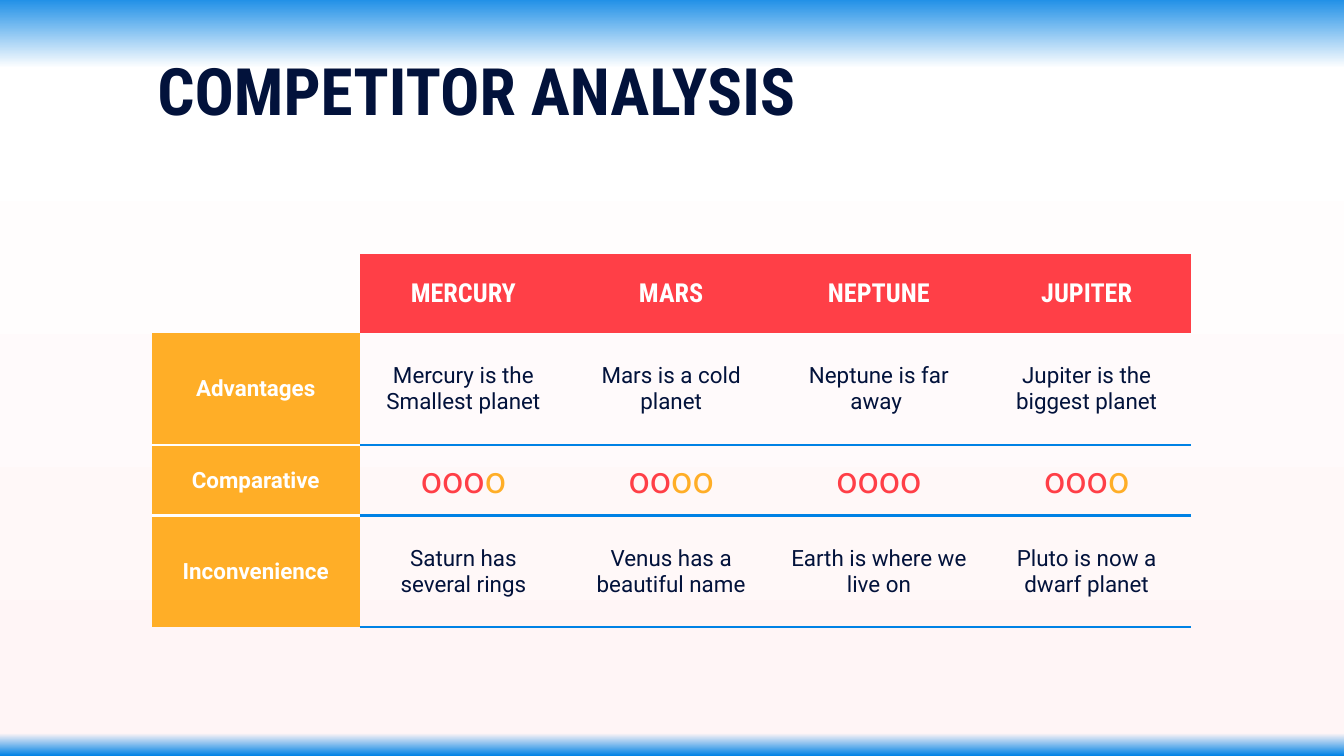
from dataclasses import dataclass
from typing import Optional

from lxml.etree import SubElement
from pptx import Presentation
from pptx.dml.color import RGBColor
from pptx.enum.shapes import MSO_SHAPE
from pptx.enum.text import MSO_ANCHOR, MSO_AUTO_SIZE, PP_ALIGN
from pptx.oxml.ns import qn
from pptx.util import Inches, Pt

NAVY = RGBColor(0x02, 0x12, 0x3B)
RED = RGBColor(0xFF, 0x3F, 0x47)
ORANGE = RGBColor(0xFF, 0xAE, 0x27)
BLUE = RGBColor(0x00, 0x82, 0xE5)
SKY = RGBColor(0x22, 0x91, 0xE7)
ROSE = RGBColor(0xFF, 0xF5, 0xF6)
CREAM = RGBColor(0xFF, 0xEC, 0xDC)
WHITE = RGBColor(0xFF, 0xFF, 0xFF)

# Widescreen, 16:9
WIDTH = Inches(10)
HEIGHT = WIDTH * 9 // 16
BACKDROP_STOPS = [(0, SKY), (9, WHITE), (97, ROSE), (100, BLUE)]
TABLE_WIDTH = 7.73
ROW_HEIGHTS = [0.59, 0.83, 0.52, 0.83]
MAX_RATING = 4
SIDES = ("left", "right", "top", "bottom")

TITLE = dict(name="Roboto Condensed", size=Pt(35), bold=True)
HEADER = dict(name="Roboto Condensed", size=Pt(14), bold=True)
LABEL = dict(name="Roboto", size=Pt(12), bold=True)
BODY = dict(name="Roboto", size=Pt(12), bold=False)
RATING = dict(name="Roboto", size=Pt(20), bold=False)


@dataclass
class Planet:
    name: str
    advantage: str
    rating: int
    inconvenience: str


@dataclass
class CellStyle:
    font: dict
    color: RGBColor
    fill: Optional[RGBColor] = None
    top: Optional[RGBColor] = None
    bottom: Optional[RGBColor] = None


PLANETS = [
    Planet("MERCURY", "Mercury is the\nSmallest planet", 3, "Saturn has several rings"),
    Planet("MARS", "Mars is a cold planet", 2, "Venus has a beautiful name"),
    Planet("NEPTUNE", "Neptune is far away ", 4, "Earth is where we live on"),
    Planet("JUPITER", "Jupiter is the biggest planet", 3, "Pluto is now a dwarf planet"),
]
LABELS = ["Advantages", "Comparative", "Inconvenience"]


def add_run(p, text: str, font: dict, color: RGBColor) -> None:
    r = p.add_run()
    r.text = text
    for key, value in font.items():
        setattr(r.font, key, value)
    r.font.color.rgb = color


def set_border(cell, side: str, color: Optional[RGBColor]) -> None:
    ln = SubElement(cell._tc.get_or_add_tcPr(), qn(f"a:ln{side}"), w=str(Pt(1.5)))
    if color is None:
        SubElement(ln, qn("a:noFill"))
    else:
        solid = SubElement(ln, qn("a:solidFill"))
        SubElement(solid, qn("a:srgbClr"), val=str(color))


def format_cell(cell, style: CellStyle) -> None:
    for side, color in zip("LRTB", (None, None, style.top, style.bottom)):
        set_border(cell, side, color)
    if style.fill is None:
        cell.fill.background()
    else:
        cell.fill.solid()
        cell.fill.fore_color.rgb = style.fill
    cell.vertical_anchor = MSO_ANCHOR.MIDDLE
    for side in SIDES:
        setattr(cell, f"margin_{side}", Inches(0.1))


def fill_cell(cell, paragraphs: list, style: CellStyle) -> None:
    """Each paragraph is a list of (text, color) runs."""
    format_cell(cell, style)
    tf = cell.text_frame
    for i, runs in enumerate(paragraphs):
        p = tf.add_paragraph() if i else tf.paragraphs[0]
        p.alignment = PP_ALIGN.CENTER
        for text, color in runs:
            add_run(p, text, style.font, color)


def write_cell(cell, text: str, style: CellStyle) -> None:
    fill_cell(cell, [[(line, style.color)] for line in text.split("\n")], style)


def add_backdrop(s) -> None:
    sp = s.shapes.add_shape(MSO_SHAPE.RECTANGLE, 0, 0, WIDTH, HEIGHT)
    sp.shadow.inherit = False
    sp.line.fill.background()
    sp.fill.gradient()
    sp.fill.gradient_angle = 270
    stops = sp._element.spPr.find(qn("a:gradFill")).find(qn("a:gsLst"))
    for gs in list(stops):
        stops.remove(gs)
    for percent, color in BACKDROP_STOPS:
        gs = SubElement(stops, qn("a:gs"), pos=str(percent * 1000))
        SubElement(gs, qn("a:srgbClr"), val=str(color))
    # Send behind the title
    s.shapes._spTree.insert(2, sp._element)


def add_title(s, text: str) -> None:
    sp = s.shapes.title
    sp.left, sp.top, sp.width, sp.height = map(Inches, (1.07, 0.27, 9.32, 0.63))
    tf = sp.text_frame
    frame = dict(word_wrap=True, auto_size=MSO_AUTO_SIZE.NONE, vertical_anchor=MSO_ANCHOR.TOP)
    frame.update({f"margin_{side}": Inches(0.1) for side in SIDES})
    for key, value in frame.items():
        setattr(tf, key, value)
    p = tf.paragraphs[0]
    p.alignment = PP_ALIGN.LEFT
    add_run(p, text, TITLE, NAVY)


def add_comparison(s) -> None:
    n_cols = len(PLANETS) + 1
    table = s.shapes.add_table(len(ROW_HEIGHTS), n_cols, Inches(1.13), Inches(1.89),
                               Inches(TABLE_WIDTH), Inches(sum(ROW_HEIGHTS))).table
    table.first_row = table.horz_banding = False
    for col in table.columns:
        col.width = Inches(TABLE_WIDTH / n_cols)
    for row, height in zip(table.rows, ROW_HEIGHTS):
        row.height = Inches(height)

    # Row labels, with white rules between them
    format_cell(table.cell(0, 0), CellStyle(LABEL, WHITE))
    for i, label in enumerate(LABELS, 1):
        style = CellStyle(LABEL, WHITE, ORANGE,
                          top=WHITE if i > 1 else None,
                          bottom=WHITE if i < len(LABELS) else None)
        write_cell(table.cell(i, 0), label, style)

    # One column for each planet
    header = CellStyle(HEADER, WHITE, RED)
    first = CellStyle(BODY, NAVY, bottom=BLUE)
    rating = CellStyle(RATING, RED, top=BLUE, bottom=BLUE)
    last = CellStyle(BODY, NAVY, top=BLUE, bottom=BLUE)
    for c, planet in enumerate(PLANETS, 1):
        write_cell(table.cell(0, c), planet.name, header)
        write_cell(table.cell(1, c), planet.advantage, first)
        marks = [("o" * planet.rating, RED), ("o" * (MAX_RATING - planet.rating), ORANGE)]
        fill_cell(table.cell(2, c), [[m for m in marks if m[0]]], rating)
        write_cell(table.cell(3, c), planet.inconvenience, last)


def main() -> None:
    prs = Presentation()
    prs.slide_width, prs.slide_height = WIDTH, HEIGHT
    s = prs.slides.add_slide(prs.slide_layouts[5])
    s.background.fill.solid()
    s.background.fill.fore_color.rgb = CREAM
    add_backdrop(s)
    add_title(s, "COMPETITOR ANALYSIS")
    add_comparison(s)
    prs.save("out.pptx")


if __name__ == "__main__":
    main()
